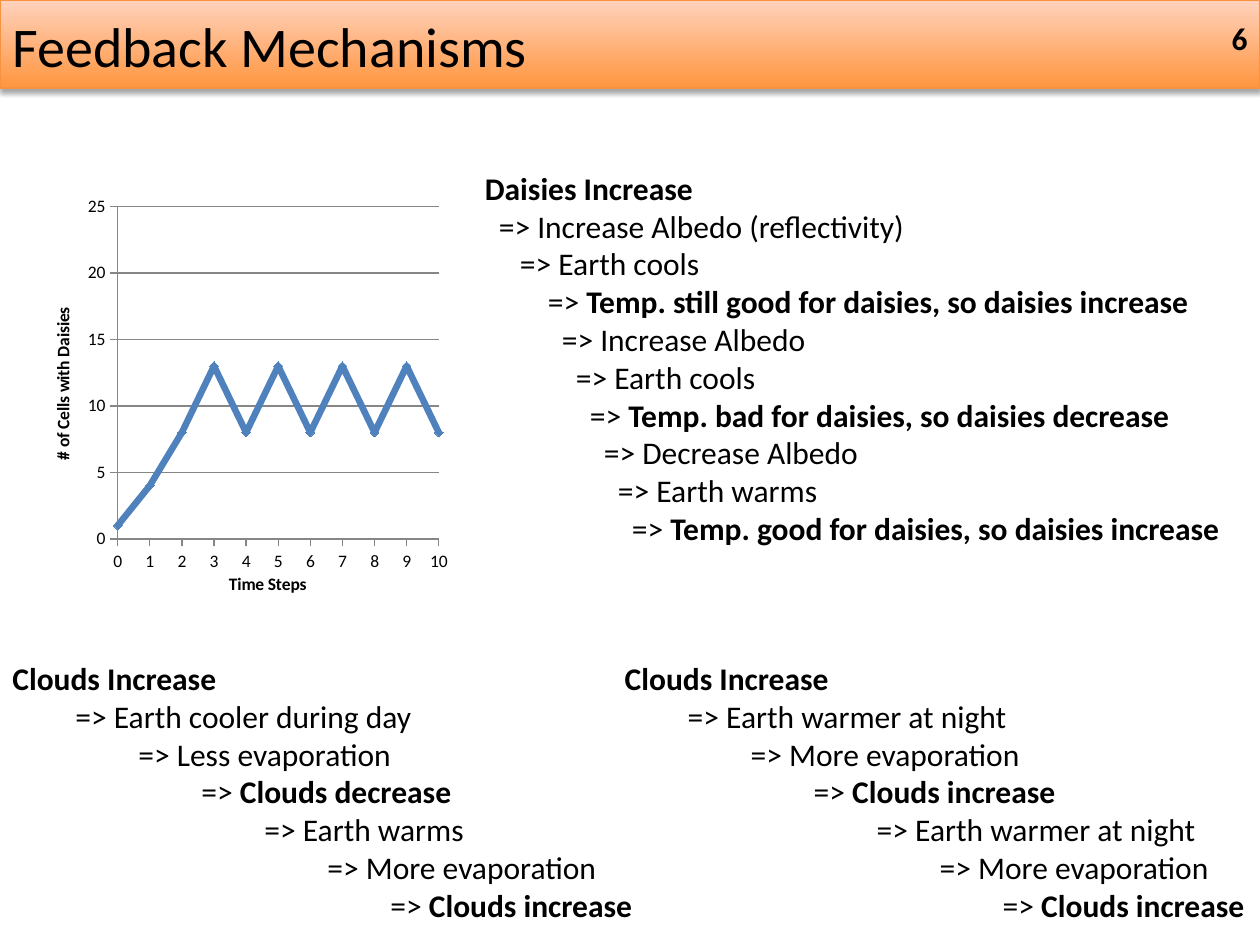
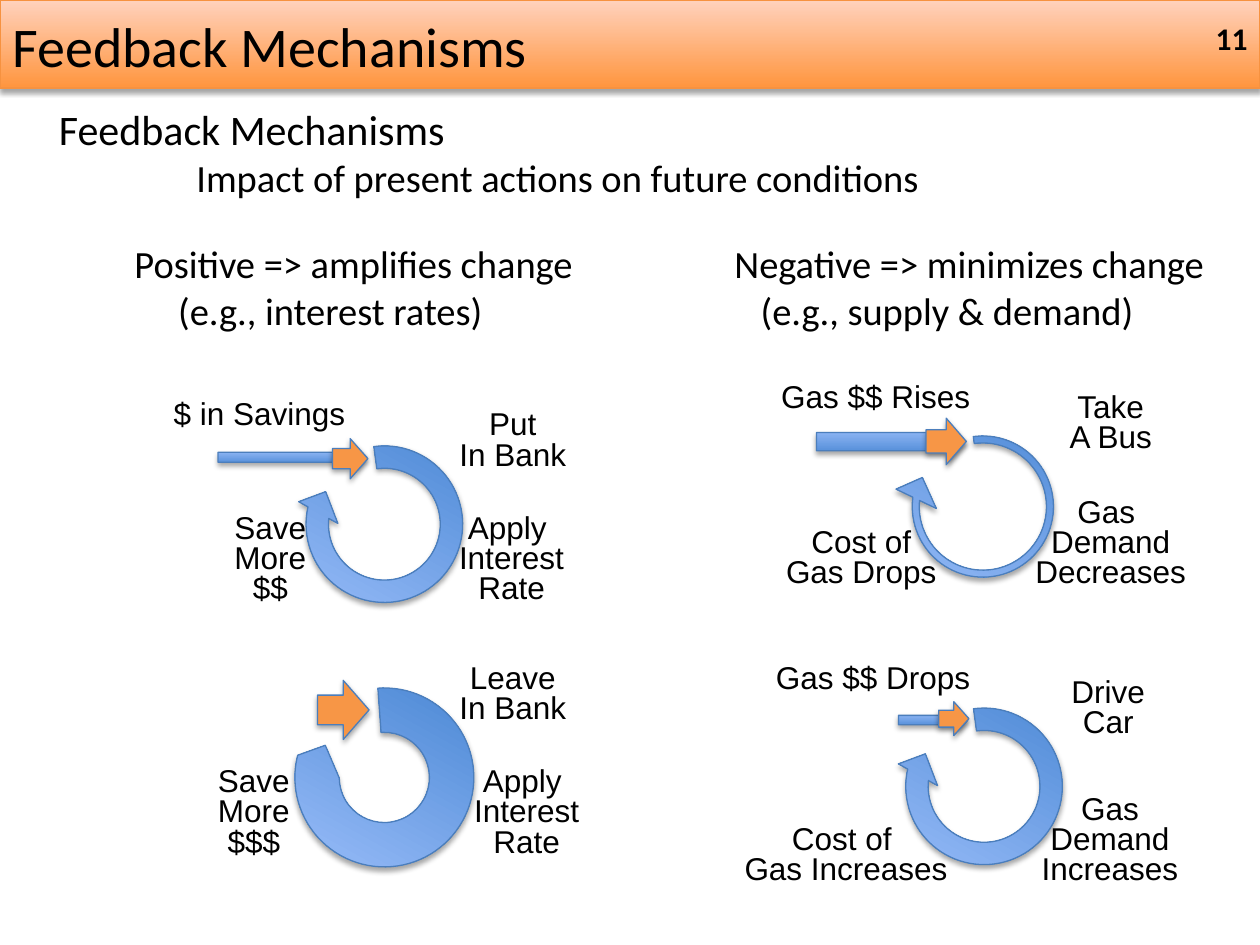
from dataclasses import dataclass

from lxml.etree import SubElement
from pptx import Presentation
from pptx.chart.data import XyChartData
from pptx.dml.color import RGBColor
from pptx.enum.chart import XL_CHART_TYPE, XL_MARKER_STYLE, XL_TICK_MARK
from pptx.enum.shapes import MSO_SHAPE
from pptx.enum.text import MSO_ANCHOR, PP_ALIGN
from pptx.oxml.ns import qn
from pptx.util import Pt


@dataclass(frozen=True)
class Theme:
    heading_font: str = "Calibri"
    label_font: str = "Arial"
    text: str = "000000"
    band: tuple = ("FF953E", "FFD2BD")
    band_line: str = "F69240"
    loop: tuple = ("3F80CE", "A4C4FF")
    loop_line: str = "4B7EBC"
    kick: str = "F79646"
    series: str = "4F81BD"
    grid: str = "868686"
    title_size: int = 32
    topic_size: int = 24
    point_size: int = 22
    body_size: int = 18
    chart_size: int = 10


THEME = Theme()
WIDTH, HEIGHT = 720, 540
TITLE = "Feedback Mechanisms"
RING_SIZE = 102.24
TAB = 36

# Each line of a chain: plain text, bold text
DAISY_CHAIN = [
    ("", "Daisies Increase"),
    ("=> Increase Albedo (reflectivity)", ""),
    ("=> Earth cools", ""),
    ("=> ", "Temp. still good for daisies, so daisies increase"),
    ("=> Increase Albedo", ""),
    ("=> Earth cools", ""),
    ("=> ", "Temp. bad for daisies, so daisies decrease"),
    ("=> Decrease Albedo", ""),
    ("=> Earth warms", ""),
    ("=> ", "Temp. good for daisies, so daisies increase"),
]
DAISY_INDENTS = [0, 8, 20] + [TAB + 8 * step for step in range(7)]

DAY_CHAIN = [
    ("", "Clouds Increase"),
    ("=> Earth cooler during day", ""),
    ("=> Less evaporation", ""),
    ("=> ", "Clouds decrease"),
    ("=> Earth warms", ""),
    ("=> More evaporation", ""),
    ("=> ", "Clouds increase"),
]
NIGHT_CHAIN = [
    ("", "Clouds Increase"),
    ("=> Earth warmer at night", ""),
    ("=> More evaporation", ""),
    ("=> ", "Clouds increase"),
    ("=> Earth warmer at night", ""),
    ("=> More evaporation", ""),
    ("=> ", "Clouds increase"),
]
DAISY_COUNTS = [1, 4, 8, 13, 8, 13, 8, 13, 8, 13, 8]

# Kinds of feedback: left, width, indent of the example, lines
FEEDBACK_KINDS = [
    (69.8, 268.6, 25, ["Positive => amplifies change", "(e.g., interest rates)"]),
    (412.6, 287.3, 15, ["Negative => minimizes change", "(e.g., supply & demand)"]),
]

THIN_RING = (0.039, 11.423, 202.571, 31.958, 0.125)
MEDIUM_RING = (0.125, 11.423, 204.577, 31.958, 0.125)
THICK_RING = (0.25, 11.423, 204.305, 34.111, 0.124)

# Labels: left, top, width, lines
CYCLES = [
    dict(ring=(168.5, 248.4), adjustments=MEDIUM_RING,
         feed=(124.6, 255.6, 85, 11.5), kick=(190, 250.6, 20.2, 23),
         labels=[(91.4, 221.8, 113.8, ["$ in Savings"]),
                 (254.9, 231.8, 76.3, ["Put", "In Bank"]),
                 (254.9, 290.9, 74.9, ["Apply ", "Interest", "Rate"]),
                 (126, 290.9, 56.9, ["Save", "More", "$$"])]),
    dict(ring=(510.5, 238.3), adjustments=THIN_RING,
         feed=(466.6, 241.9, 85, 20.9), kick=(529.2, 239, 23, 26.6),
         labels=[(438.5, 211.7, 123.8, ["Gas $$ Rises"]),
                 (601.2, 221.8, 67, ["Take", "A Bus"]),
                 (583.9, 281.5, 101.5, ["Gas ", "Demand", "Decreases"]),
                 (441.4, 298.8, 101.5, ["Cost of", "Gas Drops"])]),
    dict(ring=(168.5, 393.1), adjustments=THICK_RING,
         feed=None, kick=(181.4, 388.8, 29.5, 33.8),
         labels=[(254.9, 376.6, 76.3, ["Leave", "In Bank"]),
                 (263.5, 435.6, 74.9, ["Apply ", "Interest", "Rate"]),
                 (116.6, 435.6, 56.9, ["Save", "More", "$$$"])]),
    dict(ring=(511.2, 398.2), adjustments=MEDIUM_RING,
         feed=(513.4, 406.1, 39.6, 10.8), kick=(536.4, 401, 17.3, 19.4),
         labels=[(435.6, 372.2, 126.7, ["Gas $$ Drops"]),
                 (604.8, 384.5, 56.9, ["Drive", "Car"]),
                 (587.5, 451.4, 93.6, ["Gas", "Demand", "Increases"]),
                 (417.6, 468.7, 131.8, ["Cost of ", "Gas Increases"])]),
]


def color(value):
    return RGBColor.from_string(value)


def add_text(slide, left, top, width, lines, size, font=THEME.heading_font,
             indents=None, align=PP_ALIGN.LEFT, spacing=1.0):
    """Add a text box; a line is a string or a (plain, bold) pair."""
    height = 7.2 + 1.22 * size * spacing * len(lines)
    shape = slide.shapes.add_textbox(Pt(left), Pt(top), Pt(width), Pt(height))
    frame = shape.text_frame
    frame.word_wrap = align != PP_ALIGN.CENTER
    if align == PP_ALIGN.LEFT:
        frame.margin_right = 0
    for index, line in enumerate(lines):
        paragraph = frame.paragraphs[0] if index == 0 else frame.add_paragraph()
        paragraph.alignment = align
        paragraph.line_spacing = spacing
        paragraph.font.name = font
        paragraph.font.size = Pt(size)
        paragraph.font.color.rgb = color(THEME.text)
        if indents:
            properties = paragraph._p.get_or_add_pPr()
            properties.set("marL", str(Pt(indents[index])))
            properties.set("indent", "0")
        plain, bold = (line, "") if isinstance(line, str) else line
        if plain:
            paragraph.add_run().text = plain
        if bold:
            run = paragraph.add_run()
            run.text = bold
            run.font.bold = True
    return shape


def add_soft_shadow(shape):
    shape.shadow.inherit = False
    effects = shape._element.spPr.find(qn("a:effectLst"))
    shadow = SubElement(effects, qn("a:outerShdw"), blurRad=str(Pt(3.1)),
                        dist=str(Pt(1.8)), dir="5400000", rotWithShape="0")
    shade = SubElement(shadow, qn("a:srgbClr"), val="000000")
    SubElement(shade, qn("a:alpha"), val="35000")


def add_block(slide, kind, box, fill, line):
    """Add a shadowed shape; a pair of fill colours runs from bottom to top."""
    shape = slide.shapes.add_shape(kind, *map(Pt, box))
    if isinstance(fill, str):
        shape.fill.solid()
        shape.fill.fore_color.rgb = color(fill)
    else:
        shape.fill.gradient()
        shape.fill.gradient_angle = 90
        for stop, value in zip(shape.fill.gradient_stops, fill):
            stop.color.rgb = color(value)
    shape.line.color.rgb = color(line)
    shape.line.width = Pt(0.75)
    add_soft_shadow(shape)
    return shape


def add_titled_slide(presentation, number):
    slide = presentation.slides.add_slide(presentation.slide_layouts[6])
    add_block(slide, MSO_SHAPE.RECTANGLE, (0, 0, WIDTH, 50.4),
              THEME.band, THEME.band_line)
    add_text(slide, 0, 2.9, 312, [TITLE], THEME.title_size)
    page = add_text(slide, 552, 7.2, 168, [("", number)], THEME.body_size,
                    align=PP_ALIGN.RIGHT)
    page.text_frame.vertical_anchor = MSO_ANCHOR.MIDDLE
    return slide


def style_axis(axis, title, maximum, step):
    axis.minimum_scale, axis.maximum_scale = 0, maximum
    axis.major_unit = step
    axis.major_tick_mark = XL_TICK_MARK.OUTSIDE
    axis.minor_tick_mark = XL_TICK_MARK.NONE
    axis.format.line.color.rgb = color(THEME.grid)
    paragraph = axis.axis_title.text_frame.paragraphs[0]
    paragraph.text = title
    paragraph.font.name = THEME.heading_font
    paragraph.font.size = Pt(THEME.chart_size)
    paragraph.font.bold = True
    paragraph.font.color.rgb = color(THEME.text)


def place_plot(chart, x, y, w, h):
    """Fix the inner plot area as fractions of the chart."""
    area = chart._chartSpace.chart.plotArea
    layout = area.find(qn("c:layout"))
    if layout is None:
        layout = SubElement(area, qn("c:layout"))
        area.insert(0, layout)
    manual = SubElement(layout, qn("c:manualLayout"))
    for tag, value in [("layoutTarget", "inner"), ("xMode", "edge"), ("yMode", "edge"),
                       ("x", x), ("y", y), ("w", w), ("h", h)]:
        SubElement(manual, qn(f"c:{tag}"), val=str(value))


def add_daisy_chart(slide):
    data = XyChartData()
    points = data.add_series("Series 1")
    for step, count in enumerate(DAISY_COUNTS):
        points.add_data_point(step, count)
    chart = slide.shapes.add_chart(XL_CHART_TYPE.XY_SCATTER_LINES, Pt(16.6), Pt(111.6),
                                   Pt(270.7), Pt(231.1), data).chart
    chart.has_legend = False
    chart.has_title = False
    chart.font.name = THEME.heading_font
    chart.font.size = Pt(THEME.chart_size)
    chart.font.color.rgb = color(THEME.text)
    style_axis(chart.category_axis, "Time Steps", 10, 1)
    style_axis(chart.value_axis, "# of Cells with Daisies", 25, 5)
    chart.category_axis.has_major_gridlines = False
    chart.value_axis.has_major_gridlines = True
    chart.value_axis.major_gridlines.format.line.color.rgb = color(THEME.grid)
    plot = chart.plots[0]
    plot.vary_by_categories = False
    series = plot.series[0]
    series.smooth = False
    series.format.line.color.rgb = color(THEME.series)
    series.format.line.width = Pt(3.75)
    series.marker.style = XL_MARKER_STYLE.DIAMOND
    series.marker.size = 5
    series.marker.format.fill.solid()
    series.marker.format.fill.fore_color.rgb = color(THEME.series)
    series.marker.format.line.color.rgb = color(THEME.series)
    place_plot(chart, 0.187, 0.028, 0.678, 0.822)


def add_cycle(slide, cycle):
    ring = add_block(slide, MSO_SHAPE.CIRCULAR_ARROW,
                     (*cycle["ring"], RING_SIZE, RING_SIZE), THEME.loop, THEME.loop_line)
    ring.rotation = 209
    for index, value in enumerate(cycle["adjustments"]):
        ring.adjustments[index] = value
    if cycle["feed"]:
        add_block(slide, MSO_SHAPE.RIGHT_ARROW, cycle["feed"], THEME.loop, THEME.loop_line)
    for left, top, width, lines in cycle["labels"]:
        add_text(slide, left, top, width, lines, THEME.body_size, THEME.label_font,
                 align=PP_ALIGN.CENTER, spacing=0.8 if len(lines) > 1 else 1.0)
    add_block(slide, MSO_SHAPE.RIGHT_ARROW, cycle["kick"], THEME.kick, THEME.loop_line)


def build_chains_slide(presentation):
    slide = add_titled_slide(presentation, "6")
    add_daisy_chart(slide)
    for left, chain in [(0, DAY_CHAIN), (349.9, NIGHT_CHAIN)]:
        add_text(slide, left, 373, 370, chain, THEME.body_size,
                 indents=[TAB * level for level in range(len(chain))])
    add_text(slide, 270, 92.9, 441.4, DAISY_CHAIN, THEME.body_size, indents=DAISY_INDENTS)


def build_cycles_slide(presentation):
    slide = add_titled_slide(presentation, "11")
    add_text(slide, 26.6, 59, 237.6, [TITLE], THEME.topic_size, spacing=0.9)
    add_text(slide, 105.1, 84.2, 433.4,
             ["Impact of present actions on future conditions"], THEME.point_size)
    for left, width, indent, lines in FEEDBACK_KINDS:
        add_text(slide, left, 133.9, width, lines, THEME.point_size, indents=[0, indent])
    for cycle in CYCLES:
        add_cycle(slide, cycle)


def main():
    presentation = Presentation()
    presentation.slide_width, presentation.slide_height = Pt(WIDTH), Pt(HEIGHT)
    build_chains_slide(presentation)
    build_cycles_slide(presentation)
    presentation.save("out.pptx")


if __name__ == "__main__":
    main()
